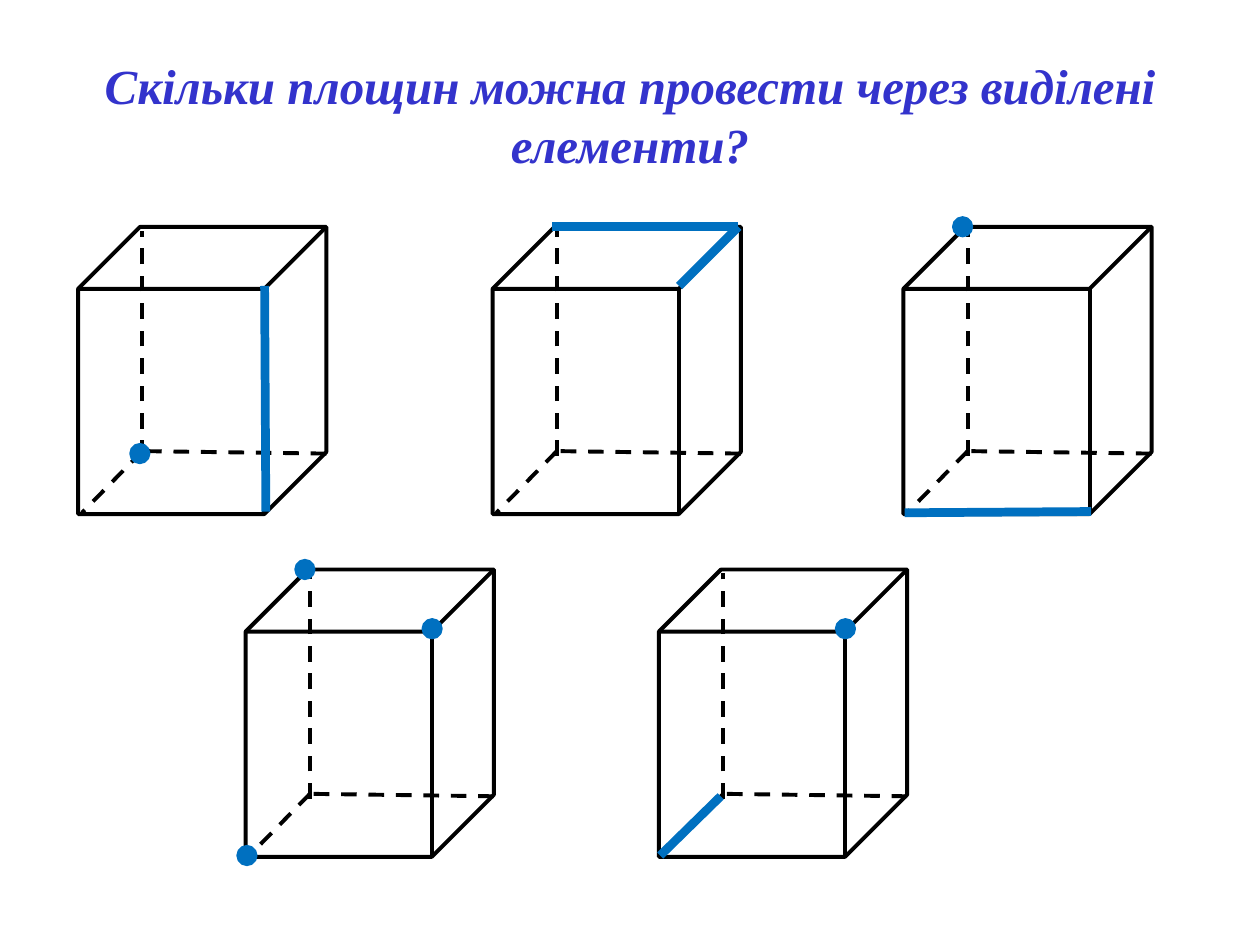
from lxml import etree
from pptx import Presentation
from pptx.dml.color import RGBColor
from pptx.enum.dml import MSO_LINE
from pptx.enum.shapes import MSO_CONNECTOR, MSO_SHAPE
from pptx.enum.text import MSO_ANCHOR, MSO_AUTO_SIZE, PP_ALIGN
from pptx.oxml.ns import qn
from pptx.util import Inches, Pt

BLACK = "000000"
HIGHLIGHT = "0070C0"
TITLE_BLUE = "3333CC"
PRISM_WIDTH, PRISM_HEIGHT = 1.97, 2.28
DOT_SIZE = 0.14

# Vertices as offsets from the top left corner of a prism
FRONT_TOP_RIGHT = (1.48, 0.47)
FRONT_BOTTOM_RIGHT = (1.49, 2.26)
FRONT_BOTTOM_LEFT = (0.01, 2.27)
BACK_TOP_LEFT = (0.47, 0)
BACK_TOP_RIGHT = (1.95, 0)
BACK_BOTTOM_LEFT = (0.49, 1.8)

HIDDEN_EDGES = [
    ((1.97, 1.8), (0.49, 1.78)),
    ((0.51, 1.78), (0.03, 2.27)),
    ((0.51, 1.82), (0.51, 0.03)),
]

# Position, highlighted edges, highlighted vertices
PRISMS = [
    ((0.62, 1.8), [(FRONT_TOP_RIGHT, FRONT_BOTTOM_RIGHT)], [BACK_BOTTOM_LEFT]),
    ((3.91, 1.8), [(BACK_TOP_RIGHT, BACK_TOP_LEFT),
                   (BACK_TOP_RIGHT, FRONT_TOP_RIGHT)], []),
    ((7.17, 1.8), [(FRONT_BOTTOM_LEFT, FRONT_BOTTOM_RIGHT)], [BACK_TOP_LEFT]),
    ((1.95, 4.52), [], [FRONT_BOTTOM_LEFT, BACK_TOP_LEFT, FRONT_TOP_RIGHT]),
    ((5.23, 4.52), [(BACK_BOTTOM_LEFT, FRONT_BOTTOM_LEFT)], [FRONT_TOP_RIGHT]),
]


def rgb(color):
    return RGBColor.from_string(color)


def style_line(line, color, width):
    line.color.rgb = rgb(color)
    line.width = Pt(width)


def add_edge(shapes, origin, edge, color, width, dash=None):
    """Draw an edge whose two ends are offsets from origin."""
    left, top = origin
    (x1, y1), (x2, y2) = edge
    connector = shapes.add_connector(
        MSO_CONNECTOR.STRAIGHT,
        Inches(left + x1), Inches(top + y1),
        Inches(left + x2), Inches(top + y2))
    style_line(connector.line, color, width)
    if dash:
        connector.line.dash_style = dash
    etree.SubElement(connector._element.spPr, qn("a:effectLst"))


def add_prism(slide, origin):
    prism = slide.shapes.add_group_shape()
    for edge in HIDDEN_EDGES:
        add_edge(prism.shapes, origin, edge, BLACK, 2.25, MSO_LINE.DASH)
    left, top = origin
    body = prism.shapes.add_shape(
        MSO_SHAPE.CUBE, Inches(left), Inches(top),
        Inches(PRISM_WIDTH), Inches(PRISM_HEIGHT))
    body.shadow.inherit = False
    body.fill.background()
    style_line(body.line, BLACK, 2.25)


def add_dot(slide, origin, vertex):
    left, top = (start + offset - DOT_SIZE / 2
                 for start, offset in zip(origin, vertex))
    dot = slide.shapes.add_shape(
        MSO_SHAPE.OVAL, Inches(left), Inches(top),
        Inches(DOT_SIZE), Inches(DOT_SIZE))
    dot.shadow.inherit = False
    dot.fill.solid()
    dot.fill.fore_color.rgb = rgb(HIGHLIGHT)
    style_line(dot.line, HIGHLIGHT, 2)


def set_title(slide, text):
    title = slide.shapes.title
    title.left, title.top = Inches(0.39), Inches(0.39)
    title.width, title.height = Inches(9.22), Inches(1.04)
    frame = title.text_frame
    frame.text = text
    frame.word_wrap = True
    frame.auto_size = MSO_AUTO_SIZE.NONE
    frame.vertical_anchor = MSO_ANCHOR.TOP
    paragraph = frame.paragraphs[0]
    paragraph.alignment = PP_ALIGN.CENTER
    font = paragraph.runs[0].font
    font.name = "Times New Roman"
    font.size = Pt(28)
    font.bold = font.italic = True
    font.color.rgb = rgb(TITLE_BLUE)


def main():
    presentation = Presentation()
    presentation.slide_width = Inches(10)
    presentation.slide_height = Inches(7.5)
    slide = presentation.slides.add_slide(presentation.slide_layouts[5])
    set_title(slide, "Скільки площин можна провести через виділені елементи?")
    for origin, edges, vertices in PRISMS:
        add_prism(slide, origin)
        for edge in edges:
            add_edge(slide.shapes, origin, edge, HIGHLIGHT, 5)
        for vertex in vertices:
            add_dot(slide, origin, vertex)
    presentation.save("out.pptx")


if __name__ == "__main__":
    main()
